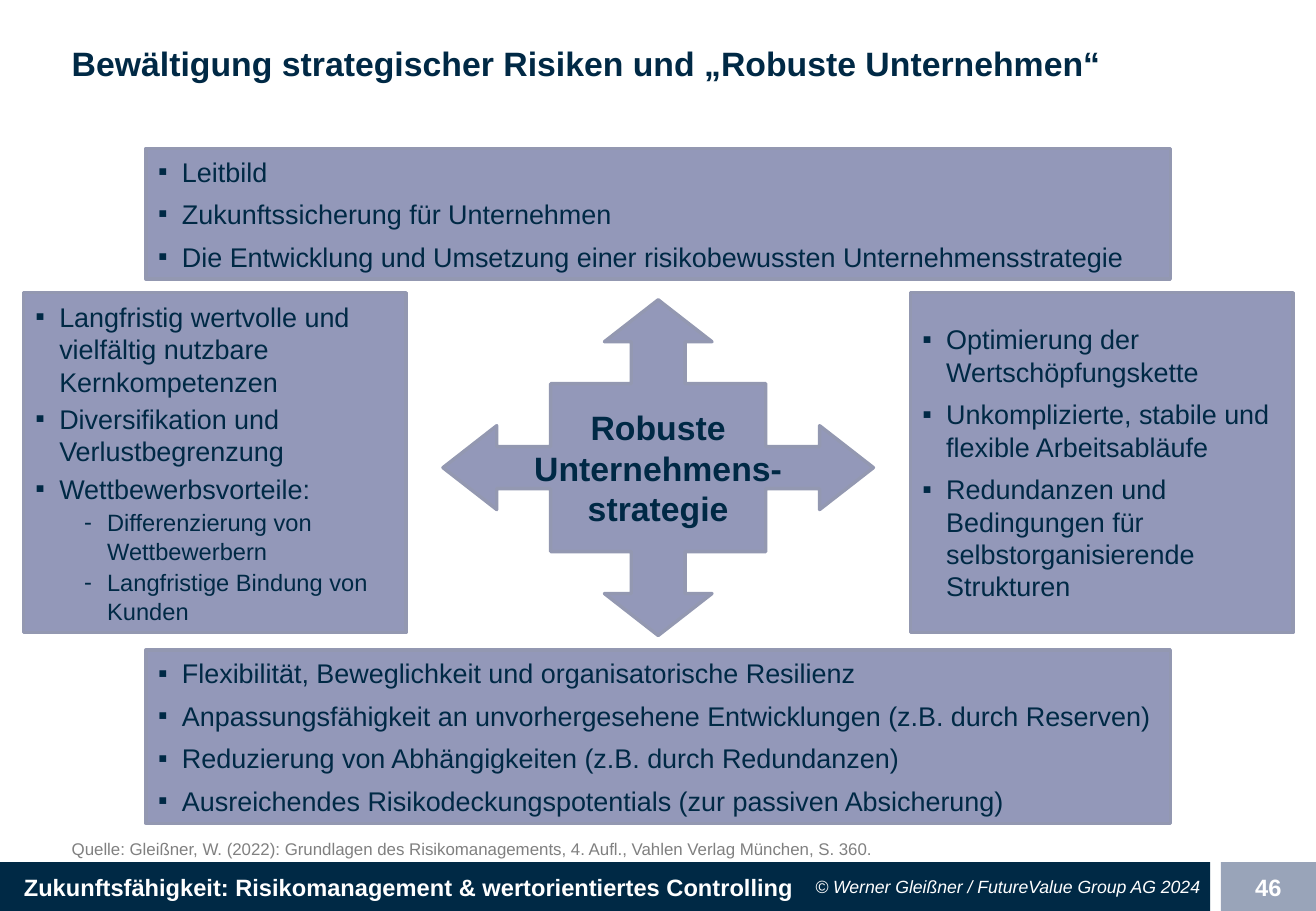
from lxml.etree import SubElement
from pptx import Presentation
from pptx.dml.color import RGBColor
from pptx.enum.shapes import MSO_SHAPE
from pptx.enum.text import MSO_ANCHOR as Anchor, PP_ALIGN as Align
from pptx.oxml.ns import qn
from pptx.util import Cm, Pt

COLORS = {"navy": "002945", "panel": "9398B9", "edge": "9398B1",
          "page": "99A4B9", "white": "FFFFFF", "source": "808080"}
FONT = "Arial"
SLIDE_W, SLIDE_H = 27.51, 19.05

TITLE = "Bewältigung strategischer Risiken und „Robuste Unternehmen“"
CORE = ["Robuste", "Unternehmens-", "strategie"]
SOURCE = ("Quelle: Gleißner, W. (2022): Grundlagen des Risikomanagements, "
          "4. Aufl., Vahlen Verlag München, S. 360.")
FOOTER = "Zukunftsfähigkeit: Risikomanagement & wertorientiertes Controlling"
COPYRIGHT = "© Werner Gleißner / FutureValue Group AG 2024"
PAGE = "46"

# Each item: level, space after in points, text
MISSION = [
    (0, 6, "Leitbild"),
    (0, 6, "Zukunftssicherung für Unternehmen"),
    (0, 6, "Die Entwicklung und Umsetzung einer risikobewussten Unternehmensstrategie"),
]
STRENGTHS = [
    (0, 3, "Langfristig wertvolle und vielfältig nutzbare Kernkompetenzen"),
    (0, 3, "Diversifikation und Verlustbegrenzung"),
    (0, 2, "Wettbewerbsvorteile:"),
    (1, 2, "Differenzierung von Wettbewerbern"),
    (1, 2, "Langfristige Bindung von Kunden"),
]
PROCESSES = [
    (0, 6, "Optimierung der Wertschöpfungskette"),
    (0, 6, "Unkomplizierte, stabile und flexible Arbeitsabläufe"),
    (0, 6, "Redundanzen und Bedingungen für selbstorganisierende Strukturen"),
]
RESILIENCE = [
    (0, 6, "Flexibilität, Beweglichkeit und organisatorische Resilienz"),
    (0, 6, "Anpassungsfähigkeit an unvorhergesehene Entwicklungen (z.B. durch Reserven)"),
    (0, 6, "Reduzierung von Abhängigkeiten (z.B. durch Redundanzen)"),
    (0, 6, "Ausreichendes Risikodeckungspotentials (zur passiven Absicherung)"),
]
# Per level: bullet, left margin in cm, hanging indent in cm, text size
LEVELS = [("▪", 0.5, 0.5, 16), ("-", 1.5, 0.48, 14)]

# Geometry in cm
CENTER_X, CENTER_Y = 13.76, 9.78
WIDE_W, SIDE_W, SIDE_H = 21.41, 8.0, 7.11
WIDE_X = CENTER_X - WIDE_W / 2
SIDE_Y, SIDE_OFFSET = 6.12, 9.27  # offset of the side panels' middle from the centre
PANELS = [
    (MISSION, WIDE_X, 3.1, WIDE_W, 2.74),
    (STRENGTHS, CENTER_X - SIDE_OFFSET - SIDE_W / 2, SIDE_Y, SIDE_W, SIDE_H),
    (PROCESSES, CENTER_X + SIDE_OFFSET - SIDE_W / 2, SIDE_Y, SIDE_W, SIDE_H),
    (RESILIENCE, WIDE_X, 13.59, WIDE_W, 3.63),
]
CROSS_HALF_W, CROSS_HALF_H = 4.5, 3.51
# Top arm and upper right corner of the cross, in units of its half size
QUARTER = [(0, -1), (0.25, -0.75), (0.125, -0.75), (0.125, -0.5),
           (0.5, -0.5), (0.5, -0.125), (0.75, -0.125), (0.75, -0.25)]
BAR_Y, BAR_H, BAR_W, PAGE_X = 18.03, 1.03, 25.3, 25.52
PAGE_W = SLIDE_W - PAGE_X


def color(name):
    return RGBColor.from_string(COLORS[name])


def style(paragraph, size, ink="navy", bold=False, italic=False, align=Align.LEFT):
    paragraph.alignment = align
    for run in paragraph.runs:
        run.font.name, run.font.size = FONT, Pt(size)
        run.font.bold, run.font.italic = bold, italic
        run.font.color.rgb = color(ink)


def paint(shape, fill, edge=None):
    shape.shadow.inherit = False
    shape.fill.solid()
    shape.fill.fore_color.rgb = color(fill)
    if edge:
        shape.line.color.rgb = color(edge)
        shape.line.width = Pt(2)
    else:
        shape.line.fill.background()


def add_rect(shapes, box, fill, edge=None):
    rect = shapes.add_shape(MSO_SHAPE.RECTANGLE, *map(Cm, box))
    paint(rect, fill, edge)
    return rect


def write_line(shape, text, size, inset=0.2, wrap=True, **look):
    frame = shape.text_frame
    frame.text = text
    frame.word_wrap = wrap
    frame.vertical_anchor = Anchor.MIDDLE
    frame.margin_left, frame.margin_right = Cm(inset), Cm(0.2)
    frame.margin_top = frame.margin_bottom = Cm(0.1)
    style(frame.paragraphs[0], size, **look)


def add_panel(shapes, items, *box):
    frame = add_rect(shapes, box, "panel", "edge").text_frame
    frame.word_wrap = True
    frame.vertical_anchor = Anchor.MIDDLE
    frame.text = "\n".join(text for _, _, text in items)
    for paragraph, (level, after, _) in zip(frame.paragraphs, items):
        bullet, margin, hanging, size = LEVELS[level]
        props = paragraph._p.get_or_add_pPr()
        props.set("marL", str(Cm(margin)))
        props.set("indent", str(-Cm(hanging)))
        SubElement(props, qn("a:buFont")).set("typeface", FONT)
        SubElement(props, qn("a:buChar")).set("char", bullet)
        paragraph.level = level
        paragraph.space_after = Pt(after)
        style(paragraph, size)


def add_cross(shapes):
    """Four-way arrow: one quarter turned three times around the centre."""
    unit_points, quarter = [], QUARTER
    for _ in range(4):
        unit_points += quarter
        quarter = [(-y, x) for x, y in quarter]
    points = [(Cm(CENTER_X + x * CROSS_HALF_W), Cm(CENTER_Y + y * CROSS_HALF_H))
              for x, y in unit_points]
    builder = shapes.build_freeform(*points[0])
    builder.add_line_segments(points[1:], close=True)
    cross = builder.convert_to_shape()
    paint(cross, "panel", "edge")
    frame = cross.text_frame
    frame.text = "\n".join(CORE)
    frame.word_wrap = False
    frame.vertical_anchor = Anchor.MIDDLE
    for paragraph in frame.paragraphs:
        style(paragraph, 20, bold=True, align=Align.CENTER)


def main():
    deck = Presentation()
    deck.slide_width, deck.slide_height = Cm(SLIDE_W), Cm(SLIDE_H)
    shapes = deck.slides.add_slide(deck.slide_layouts[6]).shapes

    footer = add_rect(shapes, (0, BAR_Y, BAR_W, BAR_H), "navy")
    write_line(footer, FOOTER, 14, inset=0.5, wrap=False, ink="white", bold=True)
    page = add_rect(shapes, (PAGE_X, BAR_Y, PAGE_W, BAR_H), "page")
    write_line(page, PAGE, 14, ink="white", bold=True, align=Align.CENTER)
    rights = shapes.add_textbox(Cm(14.3), Cm(BAR_Y), Cm(11), Cm(BAR_H))
    write_line(rights, COPYRIGHT, 10.5, ink="white", italic=True, align=Align.RIGHT)

    title = shapes.add_textbox(Cm(1.3), Cm(0.41), Cm(24), Cm(1.8))
    write_line(title, TITLE, 20, bold=True)

    add_cross(shapes)
    for panel in PANELS:
        add_panel(shapes, *panel)

    source = shapes.add_textbox(Cm(1.25), Cm(17.32), Cm(24), Cm(1.12)).text_frame
    source.text = SOURCE
    source.word_wrap = True
    source.paragraphs[0].line_spacing = 1.2
    style(source.paragraphs[0], 10, ink="source")

    deck.save("out.pptx")


if __name__ == "__main__":
    main()
